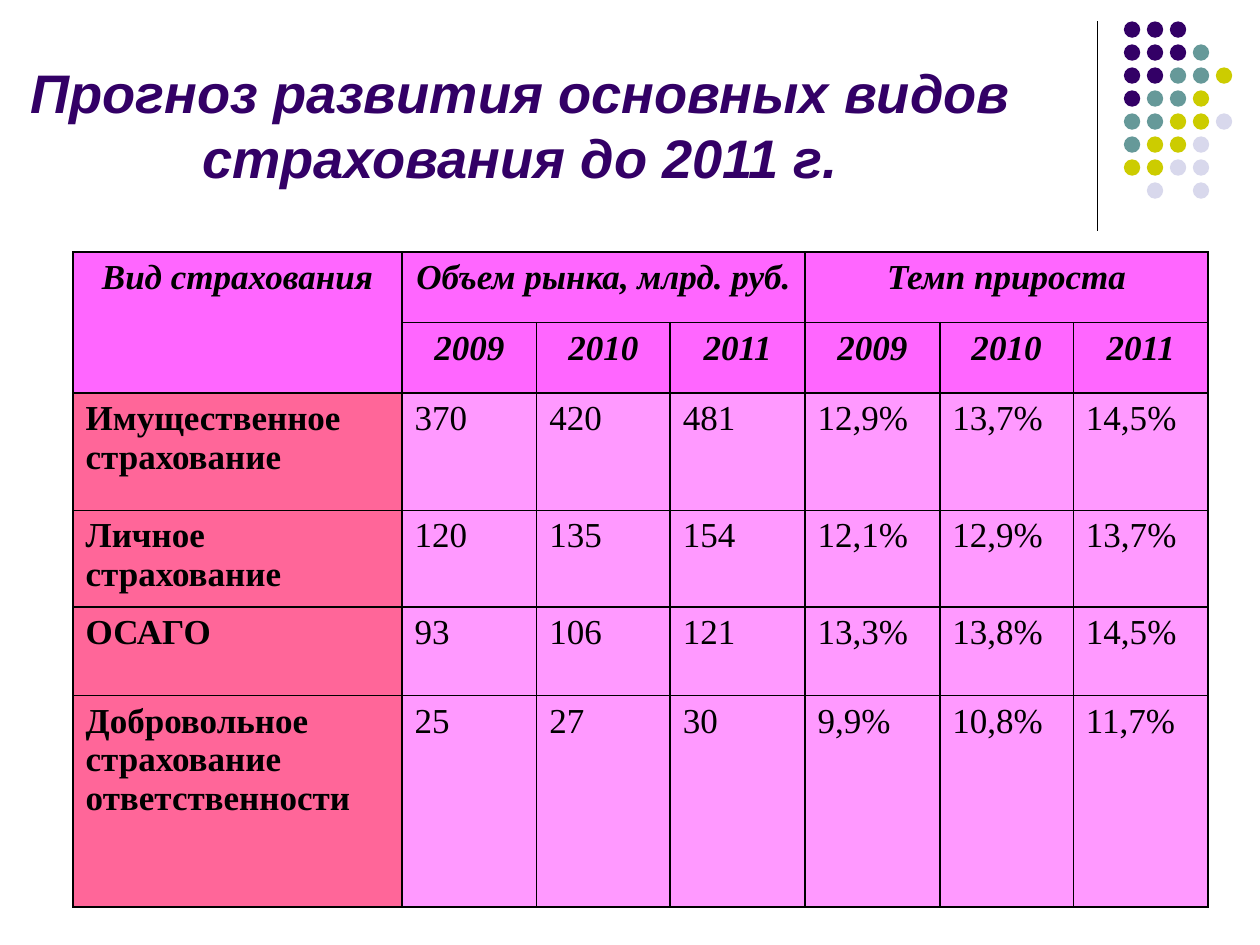
from dataclasses import dataclass

from lxml.etree import SubElement
from pptx import Presentation
from pptx.dml.color import RGBColor
from pptx.enum.shapes import MSO_CONNECTOR, MSO_SHAPE
from pptx.enum.text import MSO_ANCHOR, PP_ALIGN
from pptx.oxml.ns import qn
from pptx.util import Inches, Pt

TITLE = "Прогноз развития основных видов страхования до 2011 г."
YEARS = ["2009", "2010", "2011"]
HEADER = [
    ["Вид страхования", "Объем рынка, млрд. руб.", "", "", "Темп прироста", "", ""],
    [""] + YEARS * 2,
]
BODY = [
    ["Имущественное страхование", "370", "420", "481", "12,9%", "13,7%", "14,5%"],
    ["Личное страхование", "120", "135", "154", "12,1%", "12,9%", "13,7%"],
    ["ОСАГО", "93", "106", "121", "13,3%", "13,8%", "14,5%"],
    ["Добровольное страхование ответственности", "25", "27", "30", "9,9%", "10,8%", "11,7%"],
]
MERGES = [((0, 0), (1, 0)), ((0, 1), (0, 3)), ((0, 4), (0, 6))]
COL_WIDTHS = [2.61] + [1.07, 1.06, 1.07] * 2
ROW_HEIGHTS = [0.56, 0.56, 0.93, 0.77, 0.7, 1.68]
DOTS = ["PPP", "PPPT", "PPTTY", "PTTY", "TTYYL", "TYYL", "YYLL", " L L"]
DOT_LEFT, DOT_TOP, DOT_SIZE, DOT_STEP = 8.92, 0.17, 0.13, 0.73 / 4


@dataclass(frozen=True)
class Theme:
    """Colours, fonts and type sizes of the slide."""
    purple: str = "330066"
    teal: str = "669999"
    yellow: str = "CCCC00"
    lilac: str = "D8D8EC"
    ink: str = "000000"
    head_fill: str = "FF66FF"
    name_fill: str = "FF6699"
    value_fill: str = "FF99FF"
    title_font: str = "Arial"
    table_font: str = "Times New Roman"
    title_size: int = 31
    table_size: int = 20


T = Theme()


def rgb(value):
    """Turn a hex string into a colour."""
    return RGBColor.from_string(value)


def style(p, font, size, color, bold, italic, align):
    """Format a paragraph and its runs."""
    p.alignment = align
    for r in p.runs:
        f = r.font
        f.name, f.size, f.bold, f.italic = font, Pt(size), bold, italic
        f.color.rgb = rgb(color)


def add_title(s):
    """Add the slide title."""
    tf = s.shapes.add_textbox(Inches(0), Inches(0.13), Inches(8.25), Inches(1.42)).text_frame
    tf.word_wrap = True
    tf.vertical_anchor = MSO_ANCHOR.BOTTOM
    tf.text = TITLE
    style(tf.paragraphs[0], T.title_font, T.title_size, T.purple, True, True, PP_ALIGN.CENTER)


def add_decoration(s):
    """Add the vertical rule and the dot grid."""
    rule = s.shapes.add_connector(
        MSO_CONNECTOR.STRAIGHT, Inches(8.71), Inches(0.17), Inches(8.71), Inches(1.83))
    rule.line.color.rgb = rgb(T.ink)
    rule.line.width = Pt(0.75)
    SubElement(rule._element.spPr, qn("a:effectLst"))
    colors = {"P": T.purple, "T": T.teal, "Y": T.yellow, "L": T.lilac}
    group = s.shapes.add_group_shape()
    for row, line in enumerate(DOTS):
        for col, key in enumerate(line):
            if key in colors:
                sp = group.shapes.add_shape(
                    MSO_SHAPE.OVAL, Inches(DOT_LEFT + col * DOT_STEP),
                    Inches(DOT_TOP + row * DOT_STEP), Inches(DOT_SIZE), Inches(DOT_SIZE))
                sp.shadow.inherit = False
                sp.fill.solid()
                sp.fill.fore_color.rgb = rgb(colors[key])
                sp.line.fill.background()


def add_borders(cell):
    """Draw a thin line on every side of a cell."""
    tc_pr = cell._tc.get_or_add_tcPr()
    for i, side in enumerate(("lnL", "lnR", "lnT", "lnB")):
        ln = tc_pr.makeelement(qn(f"a:{side}"), {"w": str(Pt(1))})
        fill = SubElement(ln, qn("a:solidFill"))
        SubElement(fill, qn("a:srgbClr"), val=T.ink)
        tc_pr.insert(i, ln)


def add_forecast_table(s):
    """Add the table of market volumes and growth rates."""
    rows = HEADER + BODY
    table = s.shapes.add_table(
        len(rows), len(COL_WIDTHS), Inches(0.58), Inches(2),
        Inches(sum(COL_WIDTHS)), Inches(sum(ROW_HEIGHTS))).table
    for col, width in zip(table.columns, COL_WIDTHS):
        col.width = Inches(width)
    for row, height in zip(table.rows, ROW_HEIGHTS):
        row.height = Inches(height)
    for i, texts in enumerate(rows):
        head = i < len(HEADER)
        for j, text in enumerate(texts):
            cell = table.cell(i, j)
            cell.text = text
            cell.fill.solid()
            cell.fill.fore_color.rgb = rgb(
                T.head_fill if head else T.value_fill if j else T.name_fill)
            style(cell.text_frame.paragraphs[0], T.table_font, T.table_size, T.ink,
                  head or j == 0, head, PP_ALIGN.CENTER if head else PP_ALIGN.LEFT)
            add_borders(cell)
    for first, last in MERGES:
        table.cell(*first).merge(table.cell(*last))


def main():
    """Build the slide and save it."""
    prs = Presentation()
    prs.slide_width, prs.slide_height = Inches(10), Inches(7.5)
    s = prs.slides.add_slide(prs.slide_layouts[6])
    add_decoration(s)
    add_title(s)
    add_forecast_table(s)
    prs.save("out.pptx")


if __name__ == "__main__":
    main()
